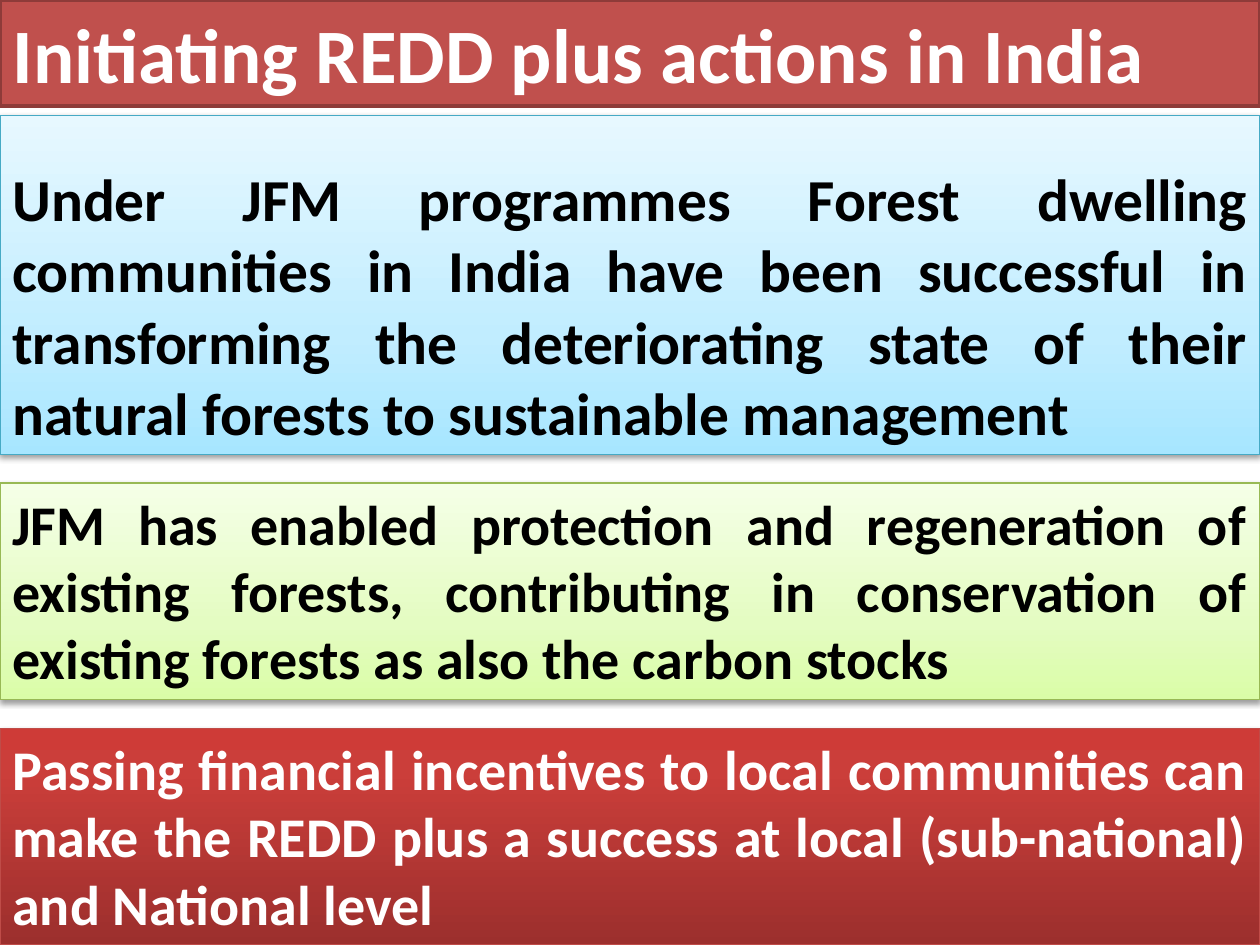
import pptx
import pptx.dml.color
import pptx.enum.shapes
import pptx.enum.text
import pptx.oxml
import pptx.oxml.ns
import pptx.util
from lxml import etree

Pt = pptx.util.Pt
qn = pptx.oxml.ns.qn
Align = pptx.enum.text.PP_ALIGN
Anchor = pptx.enum.text.MSO_ANCHOR
AutoSize = pptx.enum.text.MSO_AUTO_SIZE
RECTANGLE = pptx.enum.shapes.MSO_SHAPE.RECTANGLE

PAGE_WIDTH, PAGE_HEIGHT = 720, 540
FONT = "Calibri"

PANELS = [
    dict(top=66.2, height=193.7, size=34, color="000000", line="46AAC5",
         stops=[(0, "A7E6FF"), (35, "C1EDFF"), (100, "E7F8FF")],
         shadow=(38, 1.6), top_inset=25.6, anchor=Anchor.MIDDLE,
         text="Under JFM programmes Forest dwelling communities in India have been "
              "successful in transforming the deteriorating state of their natural "
              "forests to sustainable management"),
    dict(top=276, height=123.8, size=32, color="000000", line="98B955",
         stops=[(0, "DAFDA7"), (35, "E4FCC2"), (100, "F5FFE7")],
         shadow=(38, 1.6),
         text="JFM has enabled protection and regeneration of existing forests, "
              "contributing in conservation of existing forests as also the carbon stocks"),
    dict(top=416.2, height=123.8, size=32, color="FFFFFF", line="BF4C48",
         stops=[(0, "9C2F2D"), (80, "CB3E3A"), (100, "CE3B37")],
         shadow=(35, 1.8),
         text="Passing financial incentives to local communities can make the REDD plus "
              "a success at local (sub-national) and National level"),
]


def rgb(value):
    return pptx.dml.color.RGBColor.from_string(value)


def set_line(box, color, width):
    box.line.color.rgb = rgb(color)
    box.line.width = Pt(width)


def set_gradient(box, stops):
    box.fill.gradient()
    box.fill.gradient_angle = 90
    stop_list = box._element.spPr.find(qn("a:gradFill")).find(qn("a:gsLst"))
    for stop in list(stop_list):
        stop_list.remove(stop)
    for position, color in stops:
        stop = etree.SubElement(stop_list, qn("a:gs"), pos=str(position * 1000))
        etree.SubElement(stop, qn("a:srgbClr"), val=color)


def set_shadow(box, opacity, distance):
    box.shadow.inherit = False
    effects = box._element.spPr.find(qn("a:effectLst"))
    shadow = etree.SubElement(effects, qn("a:outerShdw"), blurRad=str(Pt(3.1)),
                              dist=str(Pt(distance)), dir="5400000", rotWithShape="0")
    color = etree.SubElement(shadow, qn("a:srgbClr"), val="000000")
    etree.SubElement(color, qn("a:alpha"), val=str(opacity * 1000))


def write_text(box, text, size, color, align, anchor=Anchor.TOP, top_inset=3.6):
    frame = box.text_frame
    frame.word_wrap = True
    frame.auto_size = AutoSize.NONE
    frame.vertical_anchor = anchor
    frame.margin_left = frame.margin_right = Pt(7.2)
    frame.margin_top, frame.margin_bottom = Pt(top_inset), Pt(3.6)
    para = frame.paragraphs[0]
    para.alignment = align
    span = para.add_run()
    span.text = text
    span.font.name = FONT
    span.font.size = Pt(size)
    span.font.bold = True
    span.font.color.rgb = rgb(color)


def place_title(page, left, top, width, height):
    box = page.shapes.title
    box.left, box.top, box.width, box.height = Pt(left), Pt(top), Pt(width), Pt(height)
    box.fill.solid()
    box.fill.fore_color.rgb = rgb("C0504D")
    set_line(box, "8E3B39", 2)
    write_text(box, "Initiating REDD plus actions in India", 44, "FFFFFF", Align.LEFT)


def place_panel(page, left, top, width, height, stops, line, shadow, **text_style):
    box = page.shapes.add_shape(RECTANGLE, Pt(left), Pt(top), Pt(width), Pt(height))
    set_gradient(box, stops)
    set_line(box, line, 0.75)
    set_shadow(box, *shadow)
    write_text(box, align=Align.JUSTIFY, **text_style)


def main():
    deck = pptx.Presentation()
    deck.slide_width, deck.slide_height = Pt(PAGE_WIDTH), Pt(PAGE_HEIGHT)
    page = deck.slides.add_slide(deck.slide_layouts[5])
    place_title(page, 0, 0, PAGE_WIDTH, 60.5)
    for panel in PANELS:
        place_panel(page, left=0, width=PAGE_WIDTH, **panel)
    deck.save("out.pptx")


if __name__ == "__main__":
    main()
